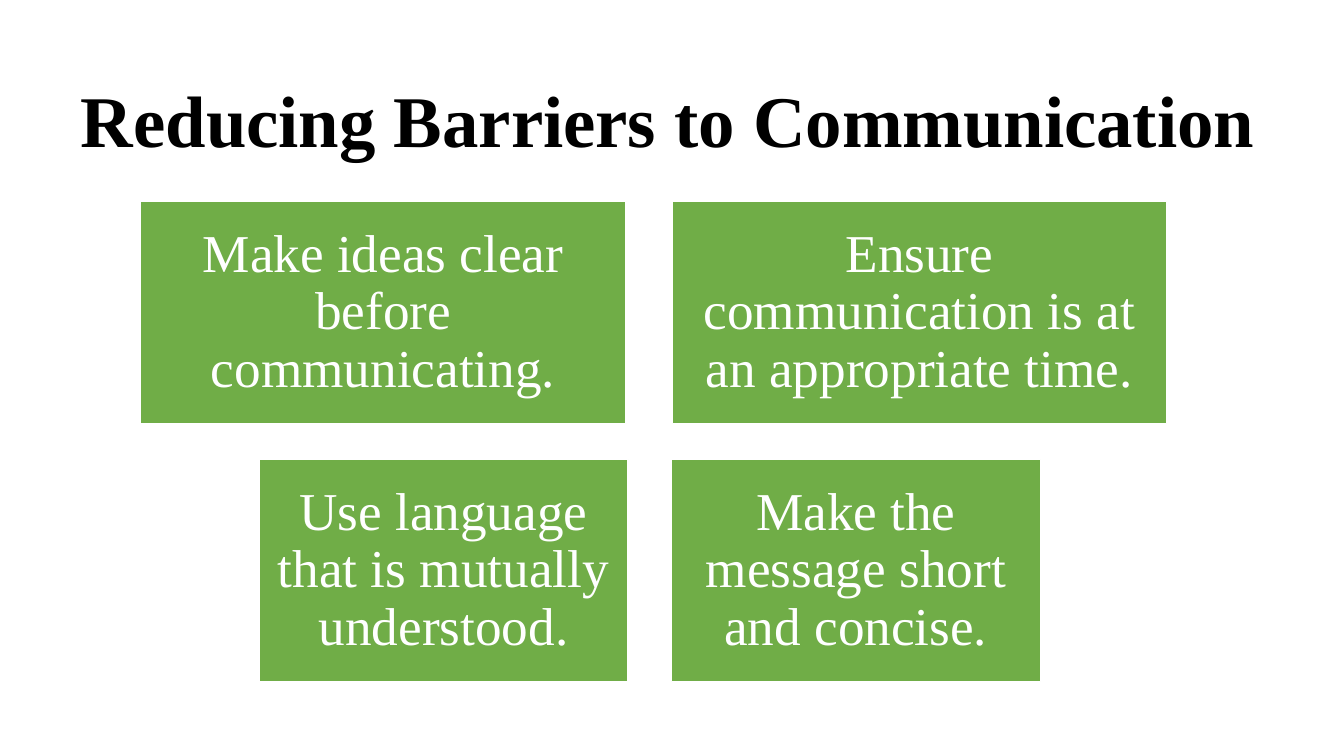
from pptx import Presentation
from pptx.dml.color import RGBColor
from pptx.enum.shapes import MSO_SHAPE as Shape
from pptx.enum.text import MSO_ANCHOR as Anchor, MSO_AUTO_SIZE as Fit, PP_ALIGN as Align
from pptx.util import Emu, Pt

PX = 9144  # 100 px to the inch
FONT = "Times New Roman"
GREEN, WHITE, BLACK = "70AD47", "FFFFFF", "000000"


def px(n):
    return Emu(n * PX)


def color(code):
    return RGBColor.from_string(code)


def write(frame, text, size, ink, pad, bold=False):
    """Centre one paragraph in a text frame."""
    frame.word_wrap = True
    frame.auto_size = Fit.NONE
    frame.vertical_anchor = Anchor.MIDDLE
    frame.margin_left = frame.margin_right = px(pad[0])
    frame.margin_top = frame.margin_bottom = px(pad[1])
    par = frame.paragraphs[0]
    par.alignment = Align.CENTER
    par.line_spacing = 0.9
    run = par.add_run()
    run.text = text
    font = run.font
    font.name, font.size, font.bold = FONT, Pt(size), bold
    font.color.rgb = color(ink)


def head(slide, box, text):
    """Title across the top."""
    title = slide.shapes.title
    title.left, title.top, title.width, title.height = map(px, box)
    write(title.text_frame, text, 52, BLACK, (10, 5), bold=True)


def card(slide, box, text):
    """Green tile with white text."""
    tile = slide.shapes.add_shape(Shape.RECTANGLE, *map(px, box))
    tile.shadow.inherit = False
    tile.fill.solid()
    tile.fill.fore_color.rgb = color(GREEN)
    tile.line.color.rgb = color(WHITE)
    tile.line.width = Pt(1)
    write(tile.text_frame, text, 38, WHITE, (16, 16))


def row(slide, box, gap, cards):
    """Tiles side by side, each with its own width."""
    left, top, high = box
    for wide, text in cards:
        card(slide, (left, top, wide, high), text)
        left += wide + gap


def main():
    deck = Presentation()
    deck.slide_width, deck.slide_height = px(1333), px(750)
    slide = deck.slides.add_slide(deck.slide_layouts[5])

    head(slide, (57, 61, 1211, 124), "Reducing Barriers to Communication")

    # Two rows of advice
    row(slide, (139, 200, 220), 46, [
        (482, "Make ideas clear before communicating."),
        (490, "Ensure communication is at an appropriate time."),
    ])
    row(slide, (257, 456, 220), 43, [
        (366, "Use language that is mutually understood."),
        (366, "Make the message short and concise."),
    ])

    deck.save("out.pptx")


if __name__ == "__main__":
    main()
